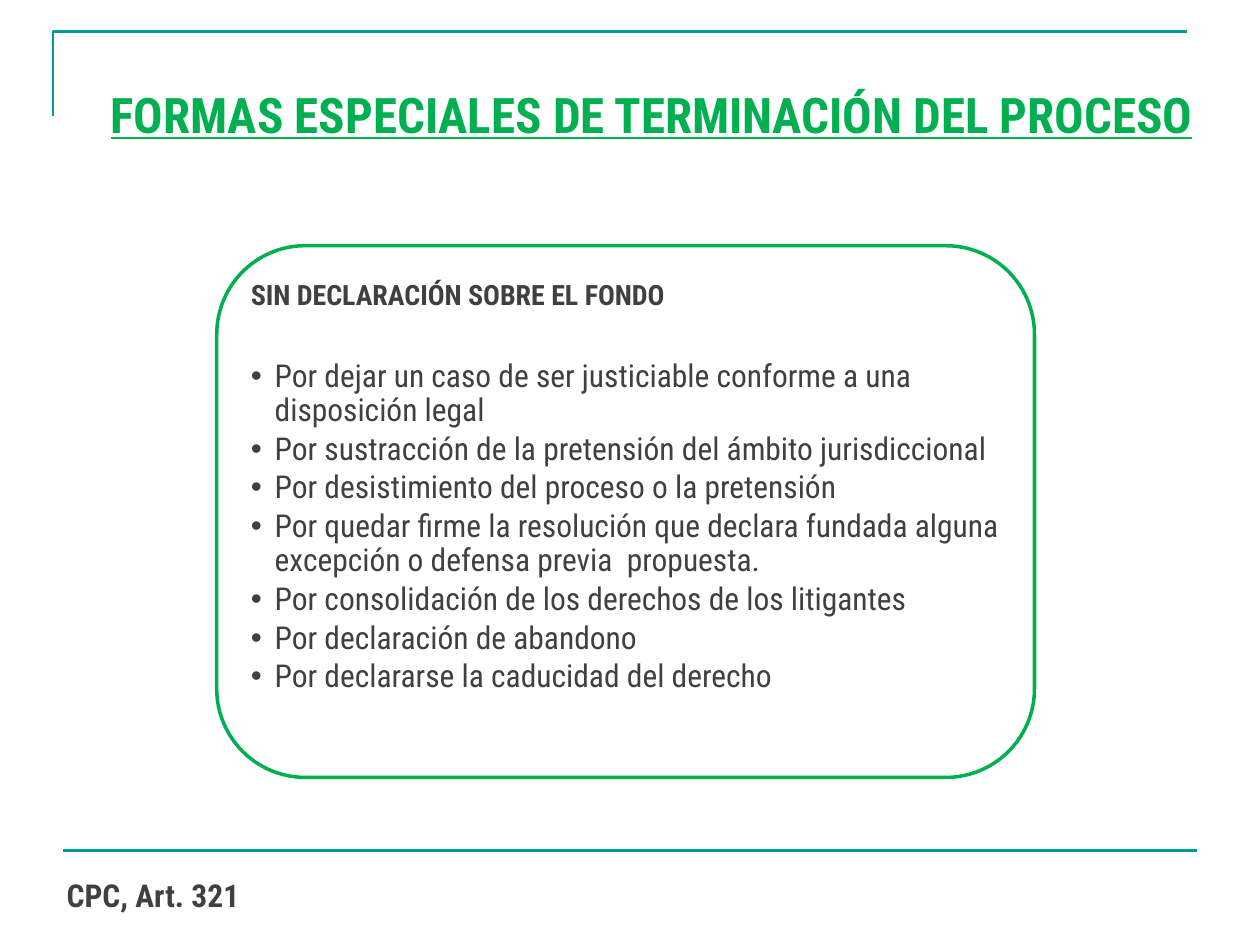
from dataclasses import dataclass

from pptx import Presentation
from pptx import util as u
from pptx.dml.color import RGBColor
from pptx.enum import shapes, text
from pptx.oxml.ns import qn
from pptx.slide import Slide
from pptx.text.text import _Paragraph


@dataclass(frozen=True)
class Theme:
    font: str = "Roboto Condensed"
    teal: str = "009999"
    green: str = "00B050"
    gray: str = "404040"
    title: int = 28
    head: int = 16
    body: int = 18
    rule: float = 1.5
    frame: int = 2


@dataclass(frozen=True)
class Box:
    left: float
    top: float
    width: float
    height: float

    def size(self) -> tuple[u.Length, ...]:
        return tuple(u.Inches(n) for n in (self.left, self.top, self.width, self.height))


@dataclass(frozen=True)
class Line:
    words: str
    size: int
    color: str
    bold: bool = False
    under: bool = False
    bullet: bool = False
    after: float = 0
    space: float = 1.0
    align: text.PP_ALIGN = text.PP_ALIGN.LEFT


THEME = Theme()
INDENT = 0.19
TITLE = Line("FORMAS ESPECIALES DE TERMINACIÓN DEL PROCESO", THEME.title, THEME.green,
             bold=True, under=True, align=text.PP_ALIGN.JUSTIFY)
SOURCE = Line("CPC, Art. 321", THEME.body, THEME.gray, bold=True)
HEAD = Line("SIN DECLARACIÓN SOBRE EL FONDO", THEME.head, THEME.gray,
            bold=True, after=28, space=0.9)
CAUSES = (
    "Por dejar un caso de ser justiciable conforme a una disposición legal",
    "Por sustracción de la pretensión del ámbito jurisdiccional",
    "Por desistimiento del proceso o la pretensión",
    "Por quedar firme la resolución que declara fundada alguna excepción o defensa previa  propuesta.",
    "Por consolidación de los derechos de los litigantes",
    "Por declaración de abandono",
    "Por declararse la caducidad del derecho",
)


def add_bullet(para: _Paragraph) -> None:
    props = para._p.get_or_add_pPr()
    props.set("marL", str(u.Inches(INDENT)))
    props.set("indent", str(u.Inches(-INDENT)))
    font = props.makeelement(qn("a:buFont"), {"typeface": "Arial"})
    mark = props.makeelement(qn("a:buChar"), {"char": "•"})
    props.extend((font, mark))


def set_line(para: _Paragraph, line: Line) -> None:
    para.text = line.words
    para.alignment = line.align
    para.line_spacing = line.space
    para.space_after = u.Pt(line.after)
    font = para.runs[0].font
    font.name = THEME.font
    font.size = u.Pt(line.size)
    font.bold = line.bold
    font.underline = line.under
    font.color.rgb = RGBColor.from_string(line.color)
    if line.bullet:
        add_bullet(para)


def add_text(slide: Slide, box: Box, lines: list[Line], pad: tuple[float, float] = (0.1, 0.05)) -> None:
    frame = slide.shapes.add_textbox(*box.size()).text_frame
    frame.word_wrap = True
    frame.vertical_anchor = text.MSO_ANCHOR.TOP
    frame.margin_left = frame.margin_right = u.Inches(pad[0])
    frame.margin_top = frame.margin_bottom = u.Inches(pad[1])
    for i, line in enumerate(lines):
        set_line(frame.add_paragraph() if i else frame.paragraphs[0], line)


def set_stroke(shape, color: str, width: float) -> None:
    shape.line.color.rgb = RGBColor.from_string(color)
    shape.line.width = u.Pt(width)


def add_corner(slide: Slide, box: Box) -> None:
    left, top, width, height = box.size()
    pen = slide.shapes.build_freeform(left, top + height)
    pen.add_line_segments([(left, top), (left + width, top)], close=False)
    shape = pen.convert_to_shape()
    shape.fill.background()
    shape.shadow.inherit = False
    set_stroke(shape, THEME.teal, THEME.rule)


def add_rule(slide: Slide, left: float, right: float, top: float) -> None:
    rule = slide.shapes.add_connector(
        shapes.MSO_CONNECTOR.STRAIGHT,
        u.Inches(left), u.Inches(top), u.Inches(right), u.Inches(top))
    set_stroke(rule, THEME.teal, THEME.rule)
    props = rule._element.spPr
    props.append(props.makeelement(qn("a:effectLst"), {}))


def add_frame(slide: Slide, box: Box) -> None:
    shape = slide.shapes.add_shape(shapes.MSO_SHAPE.ROUNDED_RECTANGLE, *box.size())
    shape.fill.background()
    shape.shadow.inherit = False
    set_stroke(shape, THEME.green, THEME.frame)


def main() -> None:
    deck = Presentation()
    deck.slide_width, deck.slide_height = u.Inches(10), u.Inches(7.5)
    slide = deck.slides.add_slide(deck.slide_layouts[6])
    add_corner(slide, Box(0.42, 0.25, 9, 0.67))
    add_rule(slide, 0.5, 9.5, 6.75)
    add_text(slide, Box(0.78, 0.62, 9, 1.25), [TITLE])
    add_text(slide, Box(0.43, 6.9, 1.81, 0.4), [SOURCE])
    add_frame(slide, Box(1.72, 1.95, 6.49, 4.22))
    causes = [Line(words, THEME.body, THEME.gray, bullet=True, after=2.7, space=0.9)
              for words in CAUSES]
    add_text(slide, Box(1.92, 2.16, 6.08, 3.81), [HEAD, *causes], pad=(0.07, 0.07))
    deck.save("out.pptx")


if __name__ == "__main__":
    main()
